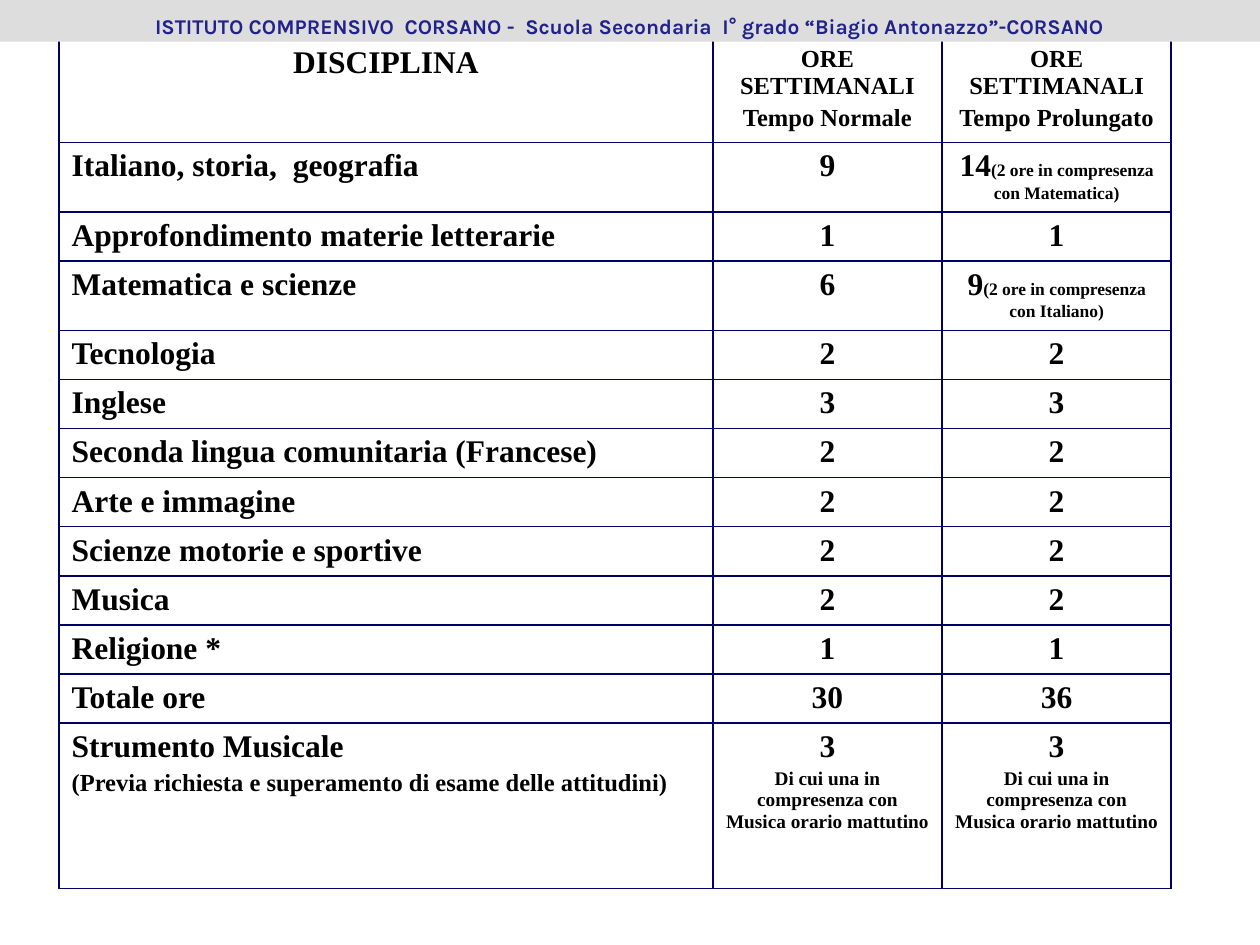
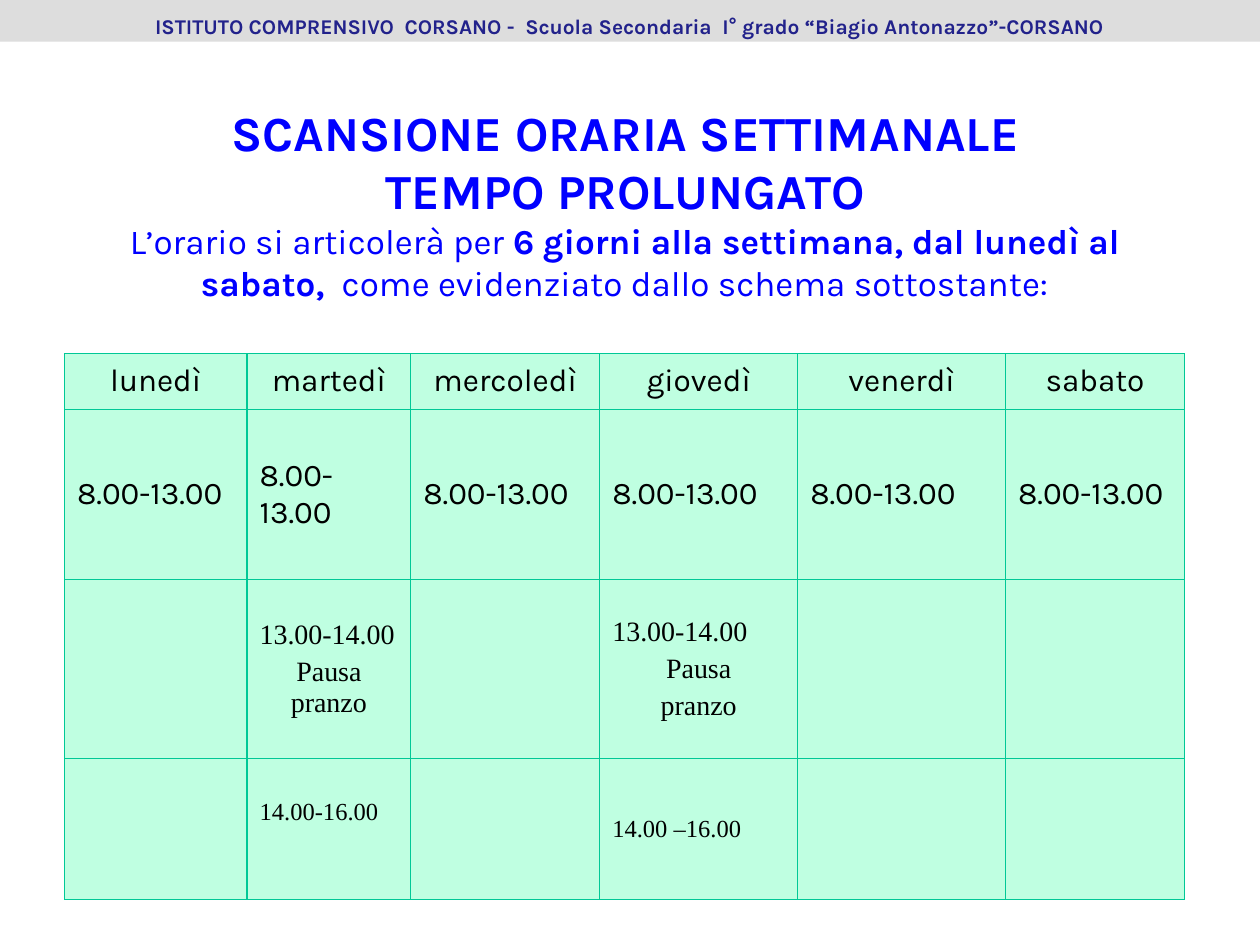
from lxml.etree import SubElement
from pptx import Presentation
from pptx.dml.color import RGBColor
from pptx.enum.shapes import MSO_SHAPE
from pptx.enum.text import MSO_ANCHOR, MSO_AUTO_SIZE, PP_ALIGN
from pptx.oxml.ns import qn
from pptx.util import Cm, Pt

BLACK = RGBColor(0x00, 0x00, 0x00)
NAVY = RGBColor(0x00, 0x00, 0x66)
INDIGO = RGBColor(0x22, 0x22, 0x8B)
BLUE = RGBColor(0x00, 0x00, 0xFF)
GREY = RGBColor(0xDD, 0xDD, 0xDD)
GREEN = RGBColor(0x00, 0xC8, 0x96)
MINT = RGBColor(0xBF, 0xFF, 0xE1)
SANS = "Karla"
SERIF = "Times New Roman"
LEFT, MID = PP_ALIGN.LEFT, PP_ALIGN.CENTER


def dress(frame, sizes, face, color, bold, align):
    """Format each paragraph; later ones get a gap of 20% of their size."""
    for n, (para, size) in enumerate(zip(frame.paragraphs, sizes)):
        para.alignment = align
        if n:
            para.space_before = Pt(round(size * 0.2, 1))
        for run in para.runs:
            run.font.name = face
            run.font.size = Pt(size)
            run.font.bold = bold
            run.font.color.rgb = color


def make_grid(slide, left, top, widths, heights, color, weight, paint):
    """Add a plain table with the same border round every cell."""
    grid = slide.shapes.add_table(
        len(heights), len(widths), Cm(left), Cm(top),
        Cm(sum(widths)), Cm(sum(heights))).table
    grid.first_row = grid.horz_banding = False
    for col, width in zip(grid.columns, widths):
        col.width = Cm(width)
    for row, height in zip(grid.rows, heights):
        row.height = Cm(height)
    for cell in grid.iter_cells():
        props = cell._tc.get_or_add_tcPr()
        for side in ("a:lnL", "a:lnR", "a:lnT", "a:lnB"):
            line = SubElement(props, qn(side), w=str(Pt(weight)))
            solid = SubElement(line, qn("a:solidFill"))
            SubElement(solid, qn("a:srgbClr"), val=str(color))
        if paint:
            cell.fill.solid()
            cell.fill.fore_color.rgb = paint
        else:
            cell.fill.background()
    return grid


deck = Presentation()
deck.slide_width, deck.slide_height = Cm(25.4), Cm(19.05)

# Slide 1: weekly hours for each subject
plan = deck.slides.add_slide(deck.slide_layouts[6])
extra = "\nDi cui una in compresenza con Musica orario mattutino"
hours = [
    ("DISCIPLINA", "ORE SETTIMANALI\nTempo Normale",
     "ORE SETTIMANALI\nTempo Prolungato"),
    ("Italiano, storia,  geografia", "9", "14"),
    ("Approfondimento materie letterarie", "1", "1"),
    ("Matematica e scienze", "6", "9"),
    ("Tecnologia", "2", "2"),
    ("Inglese", "3", "3"),
    ("Seconda lingua comunitaria (Francese)", "2", "2"),
    ("Arte e immagine", "2", "2"),
    ("Scienze motorie e sportive", "2", "2"),
    ("Musica", "2", "2"),
    ("Religione *", "1", "1"),
    ("Totale ore", "30", "36"),
    ("Strumento Musicale\n(Previa richiesta e superamento di esame "
     "delle attitudini)", "3" + extra, "3" + extra),
]
notes = {1: "(2 ore in compresenza con Matematica)",
         3: "(2 ore in compresenza con Italiano)"}
tall = [2.08, 1.4, 0.99, 1.4] + [0.99] * 8 + [3.33]
grid = make_grid(plan, 1.19, 0.79, [13.18, 4.62, 4.62], tall, NAVY, 1, None)
for r, row in enumerate(hours):
    for c, text in enumerate(row):
        frame = grid.cell(r, c).text_frame
        frame.text = text
        if r == 0 and c:
            sizes = (14, 14)
        else:
            sizes = (18, 11 if c else 14)
        align = MID if c or r == 0 else LEFT
        dress(frame, sizes, SERIF, BLACK, True, align)

# Small notes after the hours taught jointly
for r, note in notes.items():
    run = grid.cell(r, 2).text_frame.paragraphs[0].add_run()
    run.text = note
    run.font.name, run.font.size = SERIF, Pt(10)
    run.font.bold = True
    run.font.color.rgb = BLACK

# Slide 2: title and introduction
week = deck.slides.add_slide(deck.slide_layouts[5])
title = week.shapes.title
title.left, title.top = Cm(1.3), Cm(1.93)
title.width, title.height = Cm(22.6), Cm(5.1)
frame = title.text_frame
frame.text = "SCANSIONE ORARIA SETTIMANALE\nTEMPO PROLUNGATO"
frame.word_wrap = True
frame.auto_size = MSO_AUTO_SIZE.NONE
frame.vertical_anchor = MSO_ANCHOR.TOP
dress(frame, (28, 28), SANS, BLUE, True, MID)
for para in frame.paragraphs:
    para.space_before = Pt(0)
intro = frame.add_paragraph()
intro.alignment = MID
for text, bold in (
        ("L’orario si articolerà per ", False),
        ("6 giorni alla settimana, dal lunedì al sabato, ", True),
        (" come evidenziato dallo schema sottostante:", False)):
    run = intro.add_run()
    run.text = text
    run.font.name, run.font.size = SANS, Pt(20)
    run.font.bold = bold
    run.font.color.rgb = BLUE

# Timetable
days = ["lunedì", "martedì", "mercoledì", "giovedì", "venerdì", "sabato"]
times = [
    days,
    ["8.00-13.00"] * 6,
    ["", "13.00-14.00\nPausa pranzo", "",
     "13.00-14.00\nPausa\npranzo", "", ""],
    ["", "14.00-16.00", "", "14.00 –16.00", "", ""],
]
looks = [(18, SANS, MID), (18, SANS, LEFT), (16, SERIF, LEFT),
         (14, SERIF, LEFT)]
grid = make_grid(week, 1.3, 7.13, [3.68, 3.3, 3.81, 3.99, 4.19, 3.61],
                 [1.12, 3.43, 3.61, 2.84], GREEN, 0.75, MINT)
for r, (row, (size, face, align)) in enumerate(zip(times, looks)):
    for c, text in enumerate(row):
        cell = grid.cell(r, c)
        cell.vertical_anchor = MSO_ANCHOR.MIDDLE
        if text:
            frame = cell.text_frame
            frame.text = text
            dress(frame, [size] * 3, face, BLACK, False, align)
            for para in frame.paragraphs[1:]:
                para.alignment = MID
grid.cell(3, 1).margin_bottom = Cm(0.8)

# School band on top of both slides
for slide in (plan, week):
    band = slide.shapes.add_shape(
        MSO_SHAPE.RECTANGLE, 0, 0, deck.slide_width, Cm(0.84))
    band.shadow.inherit = False
    band.fill.solid()
    band.fill.fore_color.rgb = GREY
    band.line.fill.background()
    frame = band.text_frame
    frame.text = ("ISTITUTO COMPRENSIVO  CORSANO -  Scuola Secondaria  "
                  "I° grado “Biagio Antonazzo”-CORSANO")
    frame.word_wrap = True
    frame.vertical_anchor = MSO_ANCHOR.TOP
    frame.paragraphs[0].line_spacing = 1.3
    dress(frame, [12], SANS, INDIGO, True, MID)

deck.save("out.pptx")
